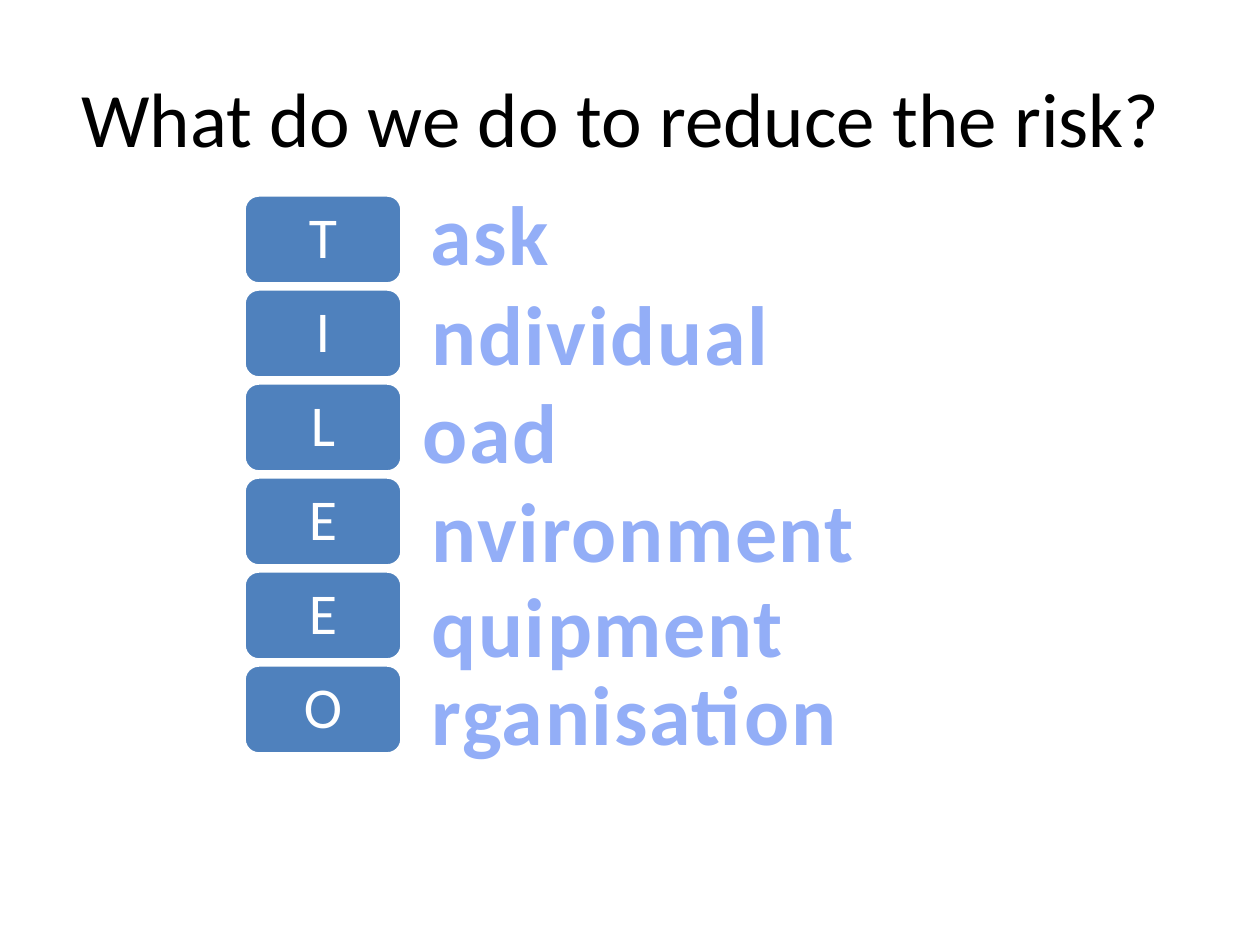
"""Builds the TILEEO risk-reduction slide."""
from dataclasses import dataclass

from pptx import Presentation
from pptx.dml.color import RGBColor
from pptx.enum.shapes import MSO_SHAPE
from pptx.enum.text import MSO_ANCHOR, MSO_AUTO_SIZE, PP_ALIGN
from pptx.util import Emu, Pt

ROUNDED = MSO_SHAPE.ROUNDED_RECTANGLE
MIDDLE = MSO_ANCHOR.MIDDLE
CENTER = PP_ALIGN.CENTER
FIT_SHAPE = MSO_AUTO_SIZE.SHAPE_TO_FIT_TEXT
PX_PER_INCH = 126


def px(length):
    return Emu(round(length * 914400 / PX_PER_INCH))


@dataclass(frozen=True)
class Theme:
    font: str = "Calibri"
    title_color: str = "000000"
    tile_color: str = "4F81BD"
    letter_color: str = "FFFFFF"
    word_color: str = "93AEF7"
    title_size: int = 44
    letter_size: int = 33
    word_size: int = 48
    tile_line: int = 2
    word_tracking: int = 100


class SlideBuilder:
    def __init__(self, slide, theme):
        self.slide = slide
        self.theme = theme

    def add_text(self, frame, text, size, color, bold=False):
        paragraph = frame.paragraphs[0]
        paragraph.alignment = CENTER
        run = paragraph.add_run()
        run.text = text
        run.font.name = self.theme.font
        run.font.size = Pt(size)
        run.font.bold = bold
        run.font.color.rgb = RGBColor.from_string(color)
        return run

    def text_box(self, left, top, width, height):
        box = self.slide.shapes.add_textbox(px(left), px(top), px(width), px(height))
        return box.text_frame

    def title(self, text, left, top, width, height):
        frame = self.text_box(left, top, width, height)
        frame.word_wrap = True
        frame.vertical_anchor = MIDDLE
        self.add_text(frame, text, self.theme.title_size, self.theme.title_color)

    def tile(self, letter, left, top, width, height):
        tile = self.slide.shapes.add_shape(ROUNDED, px(left), px(top), px(width), px(height))
        tile.shadow.inherit = False
        tile.fill.solid()
        tile.fill.fore_color.rgb = RGBColor.from_string(self.theme.tile_color)
        tile.line.color.rgb = RGBColor.from_string(self.theme.letter_color)
        tile.line.width = Pt(self.theme.tile_line)
        frame = tile.text_frame
        frame.vertical_anchor = MIDDLE
        self.add_text(frame, letter, self.theme.letter_size, self.theme.letter_color)
        frame.paragraphs[0].line_spacing = 0.9

    def word(self, text, left, top, width, height):
        frame = self.text_box(left, top, width, height)
        frame.word_wrap = False
        frame.auto_size = FIT_SHAPE
        run = self.add_text(frame, text, self.theme.word_size, self.theme.word_color, bold=True)
        run._r.get_or_add_rPr().set("spc", str(self.theme.word_tracking))


def main():
    presentation = Presentation()
    presentation.slide_width, presentation.slide_height = px(1260), px(945)
    slide = presentation.slides.add_slide(presentation.slide_layouts[6])
    builder = SlideBuilder(slide, Theme())

    builder.title("What do we do to reduce the risk? ", 63, 38, 1134, 158)

    factors = [
        ("T", "ask", 416, 175, 147),
        ("I", "ndividual", 416, 275, 368),
        ("L", "oad", 408, 373, 164),
        ("E", "nvironment", 416, 472, 455),
        ("E", "quipment", 416, 567, 383),
        ("O", "rganisation", 416, 655, 437),
    ]
    tile_top, tile_step = 195, 94
    for row, (letter, *_) in enumerate(factors):
        builder.tile(letter, 244, tile_top + row * tile_step, 158, 89)
    for _, ending, left, top, width in factors:
        builder.word(ending, left, top, width, 115)

    presentation.save("out.pptx")


if __name__ == "__main__":
    main()
